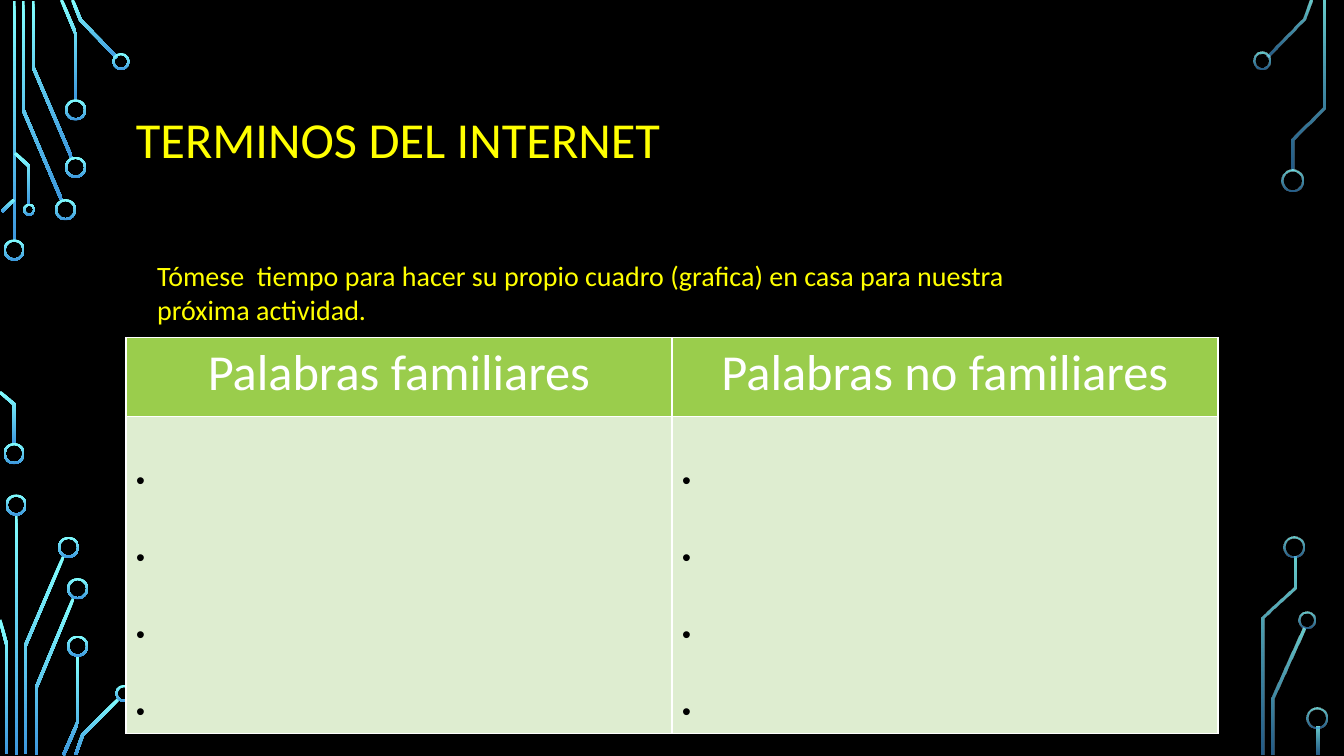
from math import hypot

from lxml import etree
from pptx import Presentation
from pptx.dml.color import RGBColor
from pptx.enum.shapes import MSO_SHAPE
from pptx.enum.text import MSO_ANCHOR, PP_ALIGN
from pptx.oxml.ns import qn
from pptx.util import Inches, Pt

DONUT = MSO_SHAPE.DONUT
TOP, BOTTOM = MSO_ANCHOR.TOP, MSO_ANCHOR.BOTTOM
CENTER, LEFT = PP_ALIGN.CENTER, PP_ALIGN.LEFT

COLORS = {"back": "000000", "text": "FFFF00", "light": "82FFFF", "deep": "3D97DE",
          "head": "9ACD4C", "body": "DEEDD0", "white": "FFFFFF", "dot": "000000"}
FONT = "Calibri"
WIRE, RIM = 0.03, 0.02

# Circuit art: wires are centre lines, rings are (centre x, centre y, diameter)
LEFT_WIRES = [
    [(0.14, 0.01), (0.14, 2.4)],
    [(0.23, 0.01), (0.23, 1.09), (0.61, 1.98)],
    [(0.33, 0.01), (0.33, 0.67), (0.71, 1.56)],
    [(0.61, 0), (0.75, 0.33), (0.75, 1)],
    [(0.72, 0), (0.8, 0.2), (1.16, 0.57)],
    [(0.02, 2.1), (0.14, 1.98)],
    [(0, 3.89), (0.14, 4.01), (0.14, 4.41)],
    [(0.15, 1.52), (0.29, 1.65), (0.29, 2.03)],
    [(0.16, 5.1), (0.16, 7.49)],
    [(0.25, 7.48), (0.25, 6.41), (0.63, 5.52)],
    [(0.07, 7.48), (0.07, 6.41), (0, 6.15)],
    [(0.36, 7.49), (0.36, 6.82), (0.73, 5.93)],
    [(0.63, 7.49), (0.77, 7.17), (0.77, 6.5)],
    [(0.75, 7.49), (0.82, 7.29), (1.18, 6.93)],
]
LEFT_RINGS = [
    (0.14, 2.48, 0.21), (0.14, 4.5, 0.21), (0.65, 2.08, 0.21), (0.75, 1.66, 0.21),
    (0.75, 1.09, 0.21), (1.2, 0.61, 0.17), (0.29, 2.08, 0.12), (0.16, 5.01, 0.21),
    (0.68, 5.43, 0.21), (0.77, 5.84, 0.21), (0.77, 6.41, 0.21), (1.23, 6.88, 0.17),
]
RIGHT_WIRES = [
    [(12.57, 0.56), (12.93, 0.19), (13, 0)],
    [(12.63, 7.49), (12.63, 6.93), (12.93, 6.23)],
    [(12.82, 1.69), (12.82, 1.38), (13.13, 1.07), (13.13, 0.01)],
    [(12.53, 7.49), (12.53, 6.13), (12.84, 5.83), (12.84, 5.52)],
    [(13.07, 7.21), (13.07, 7.49)],
]
RIGHT_RINGS = [
    (12.52, 0.6, 0.17), (12.82, 1.79, 0.21), (12.96, 6.15, 0.17),
    (12.83, 5.43, 0.21), (13.06, 7.12, 0.21),
]


def color(name):
    return RGBColor.from_string(COLORS[name])


def glow(shape, alphas):
    shape.shadow.inherit = False
    shape.line.fill.background()
    shape.fill.gradient()
    shape.fill.gradient_angle = 270
    for stop, name, place in zip(shape.fill.gradient_stops, ("light", "deep"), (0, 1)):
        stop.color.rgb = color(name)
        stop.position = place
    tones = shape._element.spPr.iter(qn("a:srgbClr"))
    for tone, alpha in zip(list(tones), alphas):
        etree.SubElement(tone, qn("a:alpha")).set("val", str(alpha * 1000))


def edge(points):
    """Offset one side of a centre line by half a wire, with mitred corners."""
    norms = []
    for (ax, ay), (bx, by) in zip(points, points[1:]):
        size = hypot(bx - ax, by - ay)
        norms.append(((ay - by) / size, (bx - ax) / size))
    pairs = zip([norms[0]] + norms, norms + [norms[-1]])
    side = []
    for (x, y), ((ux, uy), (vx, vy)) in zip(points, pairs):
        reach = WIRE / 2 / (1 + ux * vx + uy * vy)
        side.append((Inches(x + (ux + vx) * reach), Inches(y + (uy + vy) * reach)))
    return side


def circuit(slide, wires, rings, alphas=()):
    for points in wires:
        rim = edge(points) + edge(points[::-1])
        pen = slide.shapes.build_freeform(*rim[0], scale=1.0)
        pen.add_line_segments(rim[1:], close=True)
        glow(pen.convert_to_shape(), alphas)
    for x, y, size in rings:
        ring = slide.shapes.add_shape(DONUT, Inches(x - size / 2), Inches(y - size / 2),
                                      Inches(size), Inches(size))
        ring.adjustments[0] = RIM / size
        glow(ring, alphas)


def style(font, size, name):
    for key, value in {"name": FONT, "size": Pt(size), "bold": False}.items():
        setattr(font, key, value)
    font.color.rgb = color(name)


def label(slide, box, text, size, **form):
    frame = slide.shapes.add_textbox(*map(Inches, box)).text_frame
    for key, value in {"word_wrap": True, **form}.items():
        setattr(frame, key, value)
    para = frame.paragraphs[0]
    para.text = text
    style(para.runs[0].font, size, "text")
    return para


def border(cell):
    props = cell._tc.get_or_add_tcPr()
    for spot, side in enumerate(("a:lnL", "a:lnR", "a:lnT", "a:lnB")):
        line = etree.Element(qn(side), w=str(Pt(1)))
        fill = etree.SubElement(line, qn("a:solidFill"))
        etree.SubElement(fill, qn("a:srgbClr"), val=COLORS["white"])
        props.insert(spot, line)


def bullets(cell, count):
    frame = cell.text_frame
    cell.margin_top = Inches(0.49)
    for i in range(count):
        para = frame.add_paragraph() if i else frame.paragraphs[0]
        props = para._p.get_or_add_pPr()
        props.set("marL", str(Inches(0.31)))
        props.set("indent", str(-Inches(0.31)))
        etree.SubElement(props, qn("a:buFont"), typeface="Arial")
        etree.SubElement(props, qn("a:buChar"), char="•")
        para.alignment = LEFT
        if i:
            para.space_before = Pt(33)
        # An open item for the reader to fill in
        run = para.add_run()
        run.text = " "
        style(run.font, 18, "dot")


def chart(slide, box, heads, heights, count):
    table = slide.shapes.add_table(2, len(heads), *map(Inches, box)).table
    table.first_row = table.horz_banding = False
    for row, height in zip(table.rows, heights):
        row.height = Inches(height)
    for i, text in enumerate(heads):
        head, body = table.cell(0, i), table.cell(1, i)
        for cell, name in ((head, "head"), (body, "body")):
            cell.fill.solid()
            cell.fill.fore_color.rgb = color(name)
            cell.vertical_anchor = TOP
            border(cell)
        para = head.text_frame.paragraphs[0]
        para.text = text
        para.alignment = CENTER
        style(para.runs[0].font, 36, "white")
        bullets(body, count)


def main():
    deck = Presentation()
    deck.slide_width, deck.slide_height = Inches(13.33), Inches(7.5)
    slide = deck.slides.add_slide(deck.slide_layouts[6])
    slide.background.fill.solid()
    slide.background.fill.fore_color.rgb = color("back")

    # Circuit art on both sides
    circuit(slide, LEFT_WIRES, LEFT_RINGS)
    circuit(slide, RIGHT_WIRES, RIGHT_RINGS, (80, 60))

    # Title, word table and task
    title = label(slide, (1.25, 0.68, 10.83, 1), "TERMINOS DEL INTERNET", 36,
                  vertical_anchor=BOTTOM, margin_bottom=0)
    title.line_spacing = 0.9
    chart(slide, (1.25, 3.35, 10.83, 3.93),
          ("Palabras familiares", "Palabras no familiares"), (0.78, 3.15), 4)
    label(slide, (1.46, 2.52, 9.51, 0.77),
          "Tómese  tiempo para hacer su propio cuadro (grafica) en casa "
          "para nuestra próxima actividad.", 20)

    deck.save("out.pptx")


if __name__ == "__main__":
    main()
